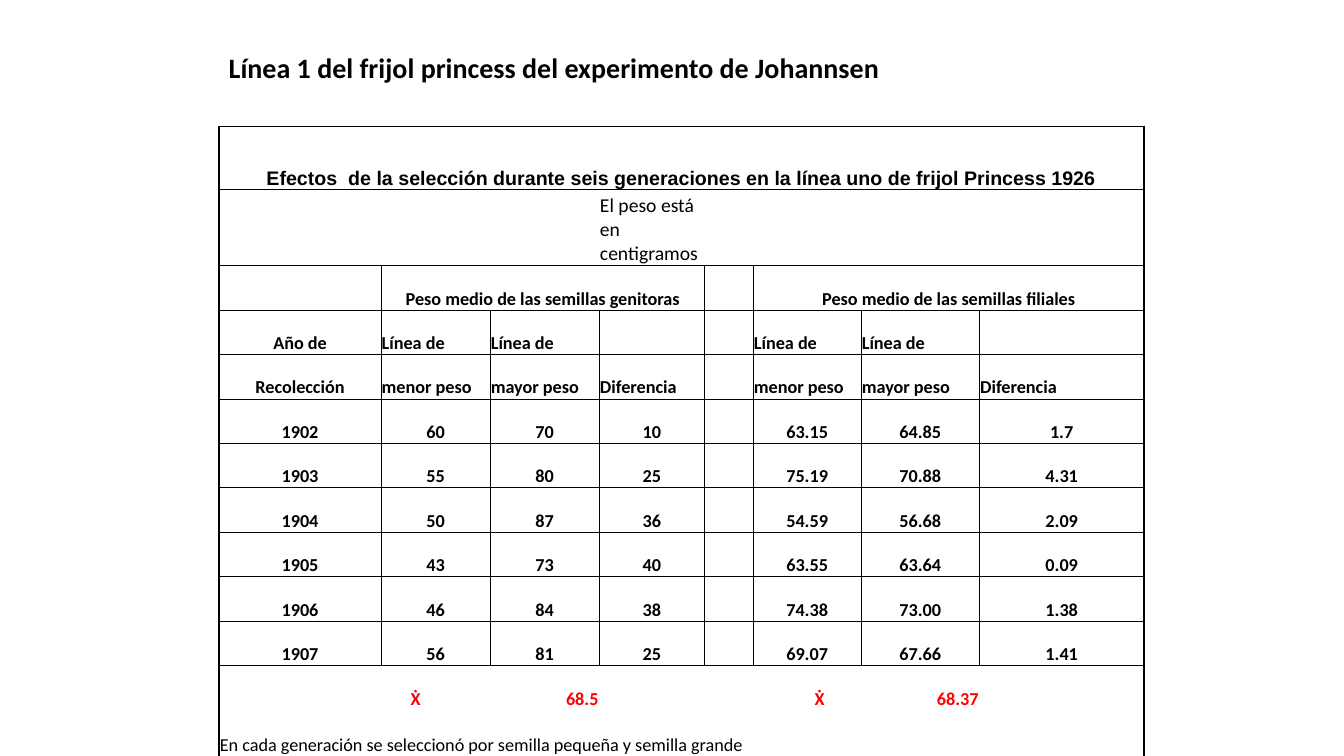
from pptx import Presentation
from pptx.dml.color import RGBColor
from pptx.enum.text import MSO_ANCHOR, PP_ALIGN
from pptx.oxml.ns import qn
from pptx.util import Cm, Pt
from lxml.etree import SubElement

BLACK, RED = "000000", "FF0000"
LEFT, CENTER, RIGHT = PP_ALIGN.LEFT, PP_ALIGN.CENTER, PP_ALIGN.RIGHT
NO_STYLE = "{2D5ABB26-0587-4C30-8999-92F81FD0307C}"

COLUMN_WIDTHS = [4.08, 2.75, 2.75, 2.65, 1.23, 2.72, 2.98, 4.15]
ROW_HEIGHTS = [1.6, 1.91] + [1.12] * 10 + [1.17]
UNITS_ROW, MEANS_ROW, NOTE_ROW = 1, 11, 12
SPANS = [(0, 0, 8), (2, 1, 3), (2, 5, 3), (NOTE_ROW, 0, 6)]

HEADINGS = [
    ["Año de", "Línea de", "Línea de", "", "", "Línea de", "Línea de", ""],
    ["Recolección", "menor peso", "mayor peso", "Diferencia", "",
     "menor peso", "mayor peso", "Diferencia"],
]
HARVESTS = [
    ["1902", "60", "70", "10", "", "63.15", "64.85", "1.7"],
    ["1903", "55", "80", "25", "", "75.19", "70.88", "4.31"],
    ["1904", "50", "87", "36", "", "54.59", "56.68", "2.09"],
    ["1905", "43", "73", "40", "", "63.55", "63.64", "0.09"],
    ["1906", "46", "84", "38", "", "74.38", "73.00", "1.38"],
    ["1907", "56", "81", "25", "", "69.07", "67.66", "1.41"],
]


def color(hex_code):
    return RGBColor.from_string(hex_code)


def edge_widths(row, col, span):
    """Border widths in points: 1 outside, 0.5 inside, 0 in open rows."""
    inner = 0 if row in (UNITS_ROW, MEANS_ROW, NOTE_ROW) else 0.5
    return {
        "a:lnL": 1 if col == 0 else inner,
        "a:lnR": 1 if col + span == len(COLUMN_WIDTHS) else inner,
        "a:lnT": 1 if row == 0 else 0 if row == NOTE_ROW else 0.5,
        "a:lnB": 1 if row == NOTE_ROW else 0 if row == MEANS_ROW else 0.5,
    }


class SlideBuilder:
    def __init__(self, slide, font="Calibri", size=13):
        self.slide, self.font, self.size = slide, font, size

    def add_text(self, frame, text, align=LEFT, size=None, font=None,
                 bold=True, ink=BLACK):
        paragraph = frame.paragraphs[0]
        paragraph.alignment = align
        run = paragraph.add_run()
        run.text = text
        run.font.name = font or self.font
        run.font.size = Pt(size or self.size)
        run.font.bold = bold
        run.font.color.rgb = color(ink)
        return paragraph

    def title(self, text, left, top, width, height):
        heading = self.slide.shapes.title
        heading.left, heading.top = Cm(left), Cm(top)
        heading.width, heading.height = Cm(width), Cm(height)
        heading.text_frame.vertical_anchor = MSO_ANCHOR.MIDDLE
        self.add_text(heading.text_frame, text, size=20).line_spacing = 0.9

    def table(self, left, top):
        frame = self.slide.shapes.add_table(
            len(ROW_HEIGHTS), len(COLUMN_WIDTHS), Cm(left), Cm(top),
            Cm(sum(COLUMN_WIDTHS)), Cm(sum(ROW_HEIGHTS)))
        grid = frame.table
        grid.first_row = grid.horz_banding = False
        grid._tbl.tblPr.find(qn("a:tableStyleId")).text = NO_STYLE
        for column, width in zip(grid.columns, COLUMN_WIDTHS):
            column.width = Cm(width)
        for row, height in zip(grid.rows, ROW_HEIGHTS):
            row.height = Cm(height)
        for row, col, span in SPANS:
            grid.cell(row, col).merge(grid.cell(row, col + span - 1))
        for row in range(len(ROW_HEIGHTS)):
            for col in range(len(COLUMN_WIDTHS)):
                self.format_cell(grid.cell(row, col), row, col)
        return grid

    def format_cell(self, cell, row, col):
        cell.vertical_anchor = MSO_ANCHOR.BOTTOM
        cell.margin_left = cell.margin_right = cell.margin_top = Cm(0.02)
        cell.margin_bottom = 0
        if not cell.is_spanned:
            span = cell.span_width if cell.is_merge_origin else 1
            for tag, width in edge_widths(row, col, span).items():
                self.border(cell, tag, width)
        cell.fill.background()

    def border(self, cell, tag, width):
        line = SubElement(cell._tc.get_or_add_tcPr(), qn(tag), w=str(Pt(width)))
        if width:
            fill = SubElement(line, qn("a:solidFill"))
            SubElement(fill, qn("a:srgbClr"), val=BLACK)
        else:
            SubElement(line, qn("a:noFill"))

    def cell_text(self, grid, row, col, text, align=LEFT, indent=0, **style):
        cell = grid.cell(row, col)
        if indent:
            cell.margin_left = Cm(indent)
        self.add_text(cell.text_frame, text, align, **style)


def main():
    deck = Presentation()
    deck.slide_width, deck.slide_height = Cm(33.87), Cm(19.05)
    builder = SlideBuilder(deck.slides.add_slide(deck.slide_layouts[5]))

    builder.title("Línea 1 del frijol princess del experimento de Johannsen",
                  5.51, 0.76, 22.86, 1.98)
    grid = builder.table(5.52, 3.18)

    # Table caption, units and column groups
    builder.cell_text(
        grid, 0, 0, "Efectos  de la selección durante seis generaciones "
        "en la línea uno de frijol Princess 1926", CENTER, size=14, font="Arial")
    builder.cell_text(grid, UNITS_ROW, 3, "El peso está en centigramos",
                      size=14, bold=False)
    for col, group in ((1, "genitoras"), (5, "filiales")):
        builder.cell_text(grid, 2, col, f"Peso medio de las semillas {group}", CENTER)

    # Column headings and harvest values
    for row, texts in enumerate(HEADINGS + HARVESTS, start=3):
        is_heading = row < 3 + len(HEADINGS)
        for col, text in enumerate(texts):
            if text:
                align = LEFT if is_heading and col else CENTER
                builder.cell_text(grid, row, col, text, align)

    # Means and closing note
    for col, indent, mean in ((1, 0.75, "68.5"), (5, 1.55, "68.37")):
        builder.cell_text(grid, MEANS_ROW, col, "Ẋ", indent=indent, ink=RED)
        builder.cell_text(grid, MEANS_ROW, col + 1, mean, RIGHT, ink=RED)
    builder.cell_text(
        grid, NOTE_ROW, 0, "En cada generación se seleccionó por semilla "
        "pequeña y semilla grande", bold=False)

    deck.save("out.pptx")


if __name__ == "__main__":
    main()
